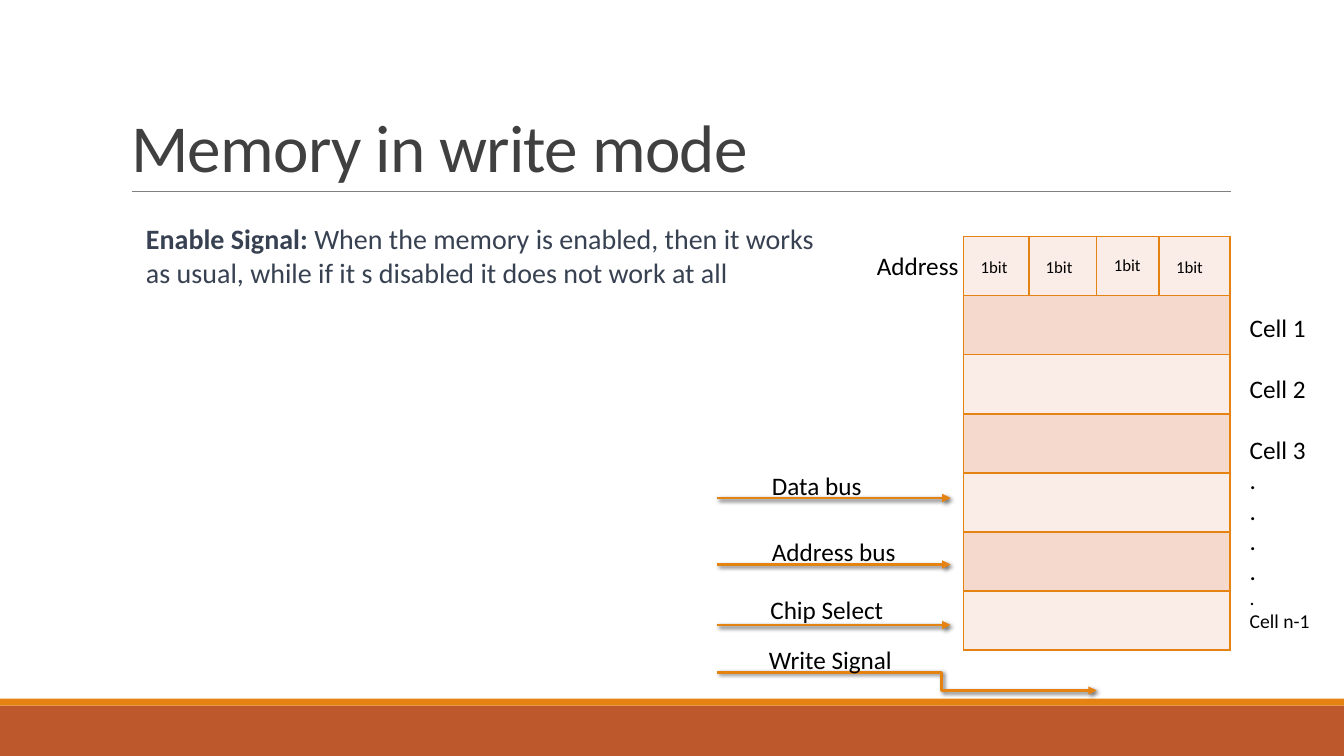
from lxml.etree import SubElement
from pptx import Presentation
from pptx.dml.color import RGBColor
from pptx.enum.shapes import MSO_CONNECTOR, MSO_SHAPE
from pptx.enum.text import MSO_ANCHOR, MSO_AUTO_SIZE, PP_ALIGN
from pptx.oxml import parse_xml
from pptx.oxml.ns import nsdecls, qn
from pptx.util import Pt

COLORS = {
    "rust": "BD582C", "orange": "E48312", "rule": "808080", "title": "404040",
    "body": "374151", "black": "000000", "light_row": "FAEDE7", "dark_row": "F5D9CC",
}
FONT = "Calibri"
MEMORY_LEFT, MEMORY_TOP, MEMORY_WIDTH = 688.5, 169.2, 190.1
ROW_HEIGHT, ROW_COUNT = 42.17, 7
SIGNAL_LEFT, SIGNAL_RIGHT = 511.9, 679
SHADOW = (
    f'<a:effectLst {nsdecls("a")}><a:outerShdw blurRad="{Pt(3)}" dist="{Pt(2)}" '
    'dir="2700000" algn="ctr" rotWithShape="0"><a:srgbClr val="000000">'
    '<a:alpha val="60000"/></a:srgbClr></a:outerShdw></a:effectLst>'
)
NO_SHADOW = f'<a:effectLst {nsdecls("a")}/>'


def color(name):
    return RGBColor.from_string(COLORS[name])


def add_run(paragraph, text, size=18, ink="black", bold=False):
    run = paragraph.add_run()
    run.text = text
    run.font.name = FONT
    run.font.size = Pt(size)
    run.font.bold = bold
    run.font.color.rgb = color(ink)
    return run


def add_text(slide, left, top, width, height, lines):
    """Add a text box; each line is (runs, space before), each run (text, format)."""
    box = slide.shapes.add_textbox(Pt(left), Pt(top), Pt(width), Pt(height))
    frame = box.text_frame
    frame.word_wrap = True
    frame.auto_size = MSO_AUTO_SIZE.SHAPE_TO_FIT_TEXT
    for index, (runs, space_before) in enumerate(lines):
        paragraph = frame.add_paragraph() if index else frame.paragraphs[0]
        paragraph.space_before = Pt(space_before)
        for text, style in runs:
            add_run(paragraph, text, **style)


def add_label(slide, text, left, top, width, height=29, **style):
    add_text(slide, left, top, width, height, [([(text, style)], 0)])


def add_line(slide, start, end, ink="orange", weight=1.0,
             kind=MSO_CONNECTOR.STRAIGHT, arrow=False):
    """Add a connector; an arrow also gets a head and a soft shadow."""
    line = slide.shapes.add_connector(kind, *map(Pt, start + end))
    line.line.color.rgb = color(ink)
    line.line.width = Pt(weight)
    properties = line._element.spPr
    if arrow:
        SubElement(properties.find(qn("a:ln")), qn("a:tailEnd"), type="triangle")
    properties.append(parse_xml(SHADOW if arrow else NO_SHADOW))
    return line


def add_bar(slide, top, height, ink):
    bar = slide.shapes.add_shape(MSO_SHAPE.RECTANGLE, 0, Pt(top), Pt(960), Pt(height))
    bar.shadow.inherit = False
    bar.fill.solid()
    bar.fill.fore_color.rgb = color(ink)
    bar.line.fill.background()


def set_title(slide, text):
    title = slide.shapes.title
    title.left, title.top, title.width, title.height = map(Pt, (86.4, 22.3, 792, 114.5))
    frame = title.text_frame
    frame.word_wrap = True
    frame.vertical_anchor = MSO_ANCHOR.BOTTOM
    paragraph = frame.paragraphs[0]
    paragraph.alignment = PP_ALIGN.LEFT
    paragraph.line_spacing = 0.85
    run = add_run(paragraph, text, size=48, ink="title")
    run.font._element.set("spc", "-50")


def add_borders(cell):
    properties = cell._tc.get_or_add_tcPr()
    for position, side in enumerate(("lnL", "lnR", "lnT", "lnB")):
        properties.insert(position, parse_xml(
            f'<a:{side} {nsdecls("a")} w="{Pt(1)}"><a:solidFill>'
            f'<a:srgbClr val="{COLORS["orange"]}"/></a:solidFill></a:{side}>'))


def add_memory(slide):
    frame = slide.shapes.add_table(
        ROW_COUNT, 1, Pt(MEMORY_LEFT), Pt(MEMORY_TOP),
        Pt(MEMORY_WIDTH), Pt(ROW_HEIGHT * ROW_COUNT))
    memory = frame.table
    memory.first_row = memory.horz_banding = False
    for index, row in enumerate(memory.rows):
        row.height = Pt(ROW_HEIGHT)
        cell = row.cells[0]
        cell.fill.solid()
        cell.fill.fore_color.rgb = color("dark_row" if index % 2 else "light_row")
        add_borders(cell)


def add_bits(slide):
    for x in (735.1, 783.4, 828):
        add_line(slide, (x, MEMORY_TOP), (x, MEMORY_TOP + ROW_HEIGHT))
    for left, top in ((693.4, 179.5), (739.8, 179.8), (788.5, 178.4), (833, 179.5)):
        add_label(slide, "1bit", left, top, 35.5, 21.8, size=12)


def add_signals(slide):
    for text, left, top, y in (("Data bus", 544.3, 332.6, 355.7),
                               ("Address bus", 544.3, 379.4, 403.2),
                               ("Chip Select", 543.2, 421.2, 446.4)):
        add_line(slide, (SIGNAL_LEFT, y), (SIGNAL_RIGHT, y), weight=2, arrow=True)
        add_label(slide, text, left, top, 105)
    write = add_line(slide, (SIGNAL_LEFT, 480.2), (783.4, 493.2), weight=2,
                     kind=MSO_CONNECTOR.ELBOW, arrow=True)
    bend = write._element.spPr.find(qn("a:prstGeom")).get_or_add_avLst()
    SubElement(bend, qn("a:gd"), name="adj1", fmla="val 59100")
    add_label(slide, "Write Signal", 542.2, 456.5, 105)


def main():
    deck = Presentation()
    deck.slide_width, deck.slide_height = Pt(960), Pt(540)
    slide = deck.slides.add_slide(deck.slide_layouts[5])

    add_bar(slide, 504, 36, "rust")
    add_bar(slide, 499, 5, "orange")
    add_line(slide, (94.3, 136.8), (879.1, 136.8), ink="rule", weight=0.5)
    set_title(slide, "Memory in write mode")

    add_memory(slide)
    add_label(slide, "Address", 619.2, 175, 87)
    add_bits(slide)

    body = {"size": 20, "ink": "body"}
    add_text(slide, 97.2, 154.8, 492.5, 55.4, [([
        ("Enable Signal: ", {**body, "bold": True}),
        ("When the memory is enabled, then it works as usual, "
         "while if it s disabled it does not work at all", body),
    ], 0)])

    cell_names = [("Cell 1", 18, 0), ("Cell 2", 18, 22), ("Cell 3", 18, 22)]
    cell_names += [(".", 18, 0)] * 4 + [(".", 14, 0), ("Cell n-1", 14, 0)]
    add_text(slide, 885.6, 219.6, 61.2, 237.6,
             [([(name, {"size": size})], gap) for name, size, gap in cell_names])
    add_signals(slide)
    deck.save("out.pptx")


if __name__ == "__main__":
    main()
